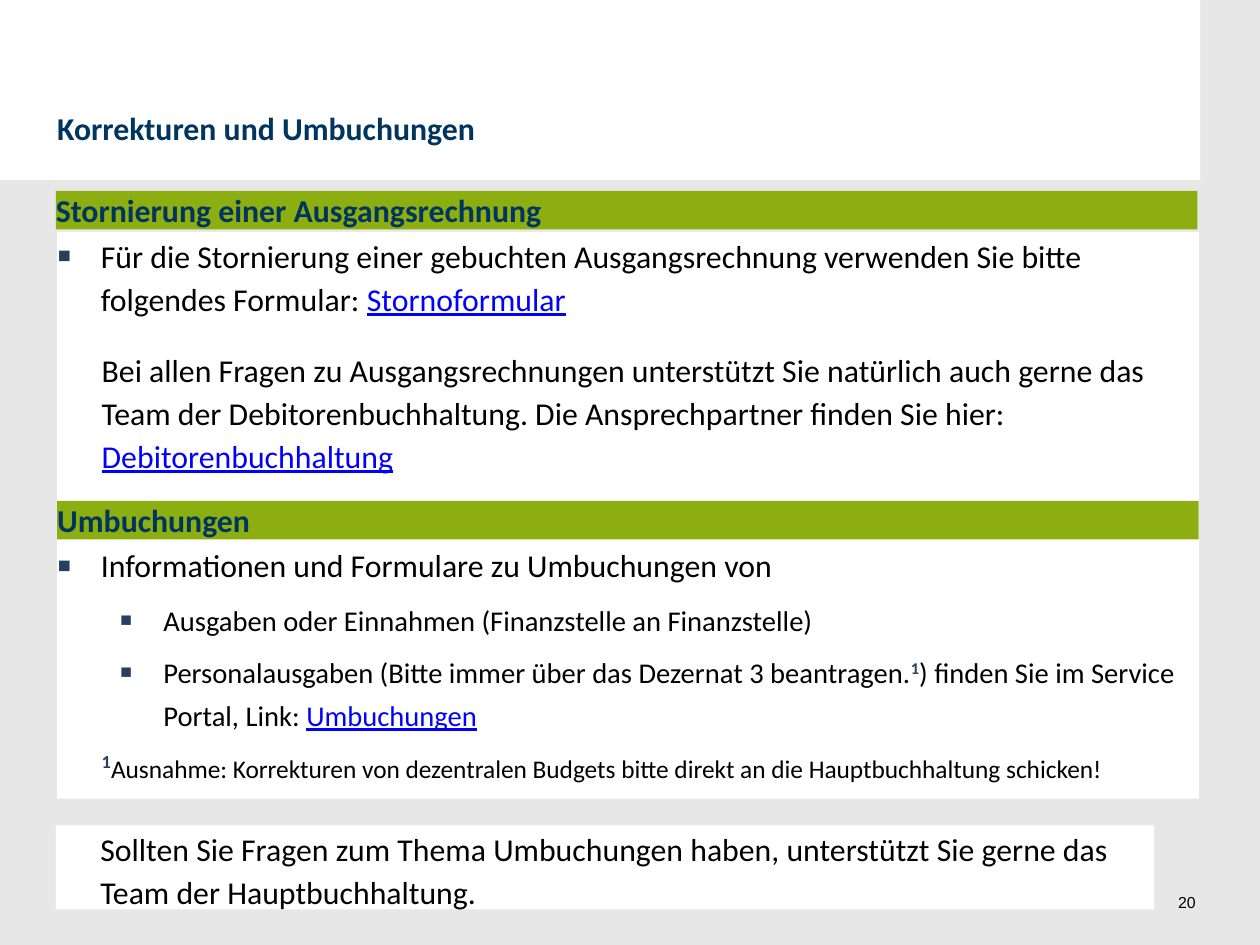
"""Build the slide on corrections and transfer postings."""
from dataclasses import dataclass

from lxml.etree import SubElement
from pptx import Presentation
from pptx.dml.color import RGBColor
from pptx.enum.shapes import MSO_SHAPE as Preset
from pptx.enum.text import MSO_ANCHOR as Anchor, MSO_AUTO_SIZE as AutoSize, PP_ALIGN as Align
from pptx.oxml.ns import qn
from pptx.util import Cm, Pt


@dataclass(frozen=True)
class Theme:
    font: str = "Calibri"
    number_font: str = "Arial"
    background: str = "E7E7E7"
    panel: str = "FFFFFF"
    bar: str = "8DAE10"
    heading: str = "003560"
    text: str = "000000"
    link: str = "0000FF"
    accent: str = "254061"
    large: int = 20
    medium: int = 18
    small: int = 16
    tiny: int = 10
    line: int = 27


THEME = Theme()
SLIDE_SIZE = (28, 21)
HEADER_BOX = (0, 0, 26.67, 4)
TITLE_BOX = (1.27, 2.4, 21.18, 0.86)
BODY_BOX = (1.27, 5.15, 25.37, 12.6)
CLOSING_BOX = (1.24, 18.34, 24.41, 1.87)
NUMBER_BOX = (25.55, 19.84, 1.02, 0.43)

TITLE = "Korrekturen und Umbuchungen"
PAGE_NUMBER = "20"
BARS = [
    ("Stornierung einer Ausgangsrechnung", (1.24, 4.24, 25.37, 0.86)),
    ("Umbuchungen", (1.27, 11.13, 25.37, 0.86)),
]

# style: level, left margin, hanging indent (cm), bullet shown
STYLES = {
    "point": (0, 0.97, 0.97, True),
    "subpoint": (1, 2.36, 0.97, True),
    "plain": (1, 0.99, 0, False),
}
BODY = [
    ("point", THEME.large, 18, [
        ("Für die Stornierung einer gebuchten Ausgangsrechnung verwenden Sie bitte "
         "folgendes Formular: ", "text"),
        ("Stornoformular", "link")]),
    ("plain", THEME.large, 42, [
        ("Bei allen Fragen zu Ausgangsrechnungen unterstützt Sie natürlich auch gerne das "
         "Team der Debitorenbuchhaltung. Die Ansprechpartner finden Sie hier: ", "text"),
        ("Debitorenbuchhaltung", "link")]),
    ("point", THEME.large, 6, [
        ("Informationen und Formulare zu Umbuchungen von", "text")]),
    ("subpoint", THEME.medium, 6, [
        ("Ausgaben oder Einnahmen (Finanzstelle an Finanzstelle)", "text")]),
    ("subpoint", THEME.medium, 6, [
        ("Personalausgaben (Bitte immer über das Dezernat 3 beantragen.", "text"),
        ("1", "note"),
        (") finden Sie im Service Portal, Link: ", "text"),
        ("Umbuchungen", "link")]),
    ("plain", THEME.small, 6, [
        ("1", "footnote"),
        ("Ausnahme: Korrekturen von dezentralen Budgets bitte direkt an die "
         "Hauptbuchhaltung schicken!", "text")]),
]
CLOSING = [
    ("plain", THEME.large, 6, [
        ("Sollten Sie Fragen zum Thema Umbuchungen haben, unterstützt Sie gerne das "
         "Team der Hauptbuchhaltung.", "text")]),
]


def place(shape, box):
    shape.left, shape.top, shape.width, shape.height = map(Cm, box)


def paint(shape, color):
    shape.fill.solid()
    shape.fill.fore_color.rgb = RGBColor.from_string(color)


def add_panel(slide, box, color):
    shape = slide.shapes.add_shape(Preset.RECTANGLE, *map(Cm, box))
    paint(shape, color)
    shape.line.fill.background()
    shape.shadow.inherit = False
    return shape


def prepare_frame(shape, anchor=Anchor.TOP):
    frame = shape.text_frame
    frame.margin_left = frame.margin_right = frame.margin_top = frame.margin_bottom = 0
    frame.word_wrap = True
    frame.auto_size = AutoSize.NONE
    frame.vertical_anchor = anchor
    return frame


def add_run(paragraph, text, size, color, bold=False, font=THEME.font):
    run = paragraph.add_run()
    run.text = text
    run.font.name, run.font.size, run.font.bold = font, Pt(size), bold
    run.font.color.rgb = RGBColor.from_string(color)
    return run


def write_line(shape, text, size, color, bold=False, font=THEME.font, align=Align.LEFT):
    paragraph = prepare_frame(shape, Anchor.MIDDLE).paragraphs[0]
    paragraph.alignment = align
    add_run(paragraph, text, size, color, bold, font)


def set_bullet(paragraph, style):
    level, margin, hanging, bullet = STYLES[style]
    paragraph.level = level
    properties = paragraph._p.get_or_add_pPr()
    properties.set("marL", str(Cm(margin)))
    properties.set("indent", str(-Cm(hanging)))
    if not bullet:
        SubElement(properties, qn("a:buNone"))
        return
    color = SubElement(properties, qn("a:buClr"))
    SubElement(color, qn("a:srgbClr"), val=THEME.accent)
    SubElement(properties, qn("a:buSzPct"), val="130000")
    SubElement(properties, qn("a:buFont"), typeface=THEME.font)
    SubElement(properties, qn("a:buChar"), char="▪")


def write_paragraphs(shape, content):
    frame = prepare_frame(shape)
    for index, (style, size, space_after, runs) in enumerate(content):
        paragraph = frame.add_paragraph() if index else frame.paragraphs[0]
        set_bullet(paragraph, style)
        paragraph.alignment = Align.LEFT
        paragraph.line_spacing = Pt(THEME.line)
        paragraph.space_before, paragraph.space_after = Pt(0), Pt(space_after)
        for text, role in runs:
            raised = role in ("note", "footnote")
            color = THEME.accent if raised else getattr(THEME, role)
            run_size = THEME.large if role == "footnote" else size
            run = add_run(paragraph, text, run_size, color, raised)
            if role == "link":
                run.font.underline = True
            if raised:
                run._r.get_or_add_rPr().set("baseline", "30000")


def main():
    presentation = Presentation()
    presentation.slide_width, presentation.slide_height = map(Cm, SLIDE_SIZE)
    slide = presentation.slides.add_slide(presentation.slide_layouts[1])
    paint(slide.background, THEME.background)

    title, body = slide.shapes.title, slide.placeholders[1]
    header = add_panel(slide, HEADER_BOX, THEME.panel)
    title.element.addprevious(header.element)
    place(title, TITLE_BOX)
    write_line(title, TITLE, THEME.large, THEME.heading, bold=True)

    place(body, BODY_BOX)
    paint(body, THEME.panel)
    write_paragraphs(body, BODY)

    for text, box in BARS:
        bar = add_panel(slide, box, THEME.bar)
        write_line(bar, text, THEME.large, THEME.heading, bold=True)

    write_paragraphs(add_panel(slide, CLOSING_BOX, THEME.panel), CLOSING)
    number = slide.shapes.add_textbox(*map(Cm, NUMBER_BOX))
    write_line(number, PAGE_NUMBER, THEME.tiny, THEME.text,
               font=THEME.number_font, align=Align.RIGHT)
    presentation.save("out.pptx")


if __name__ == "__main__":
    main()
